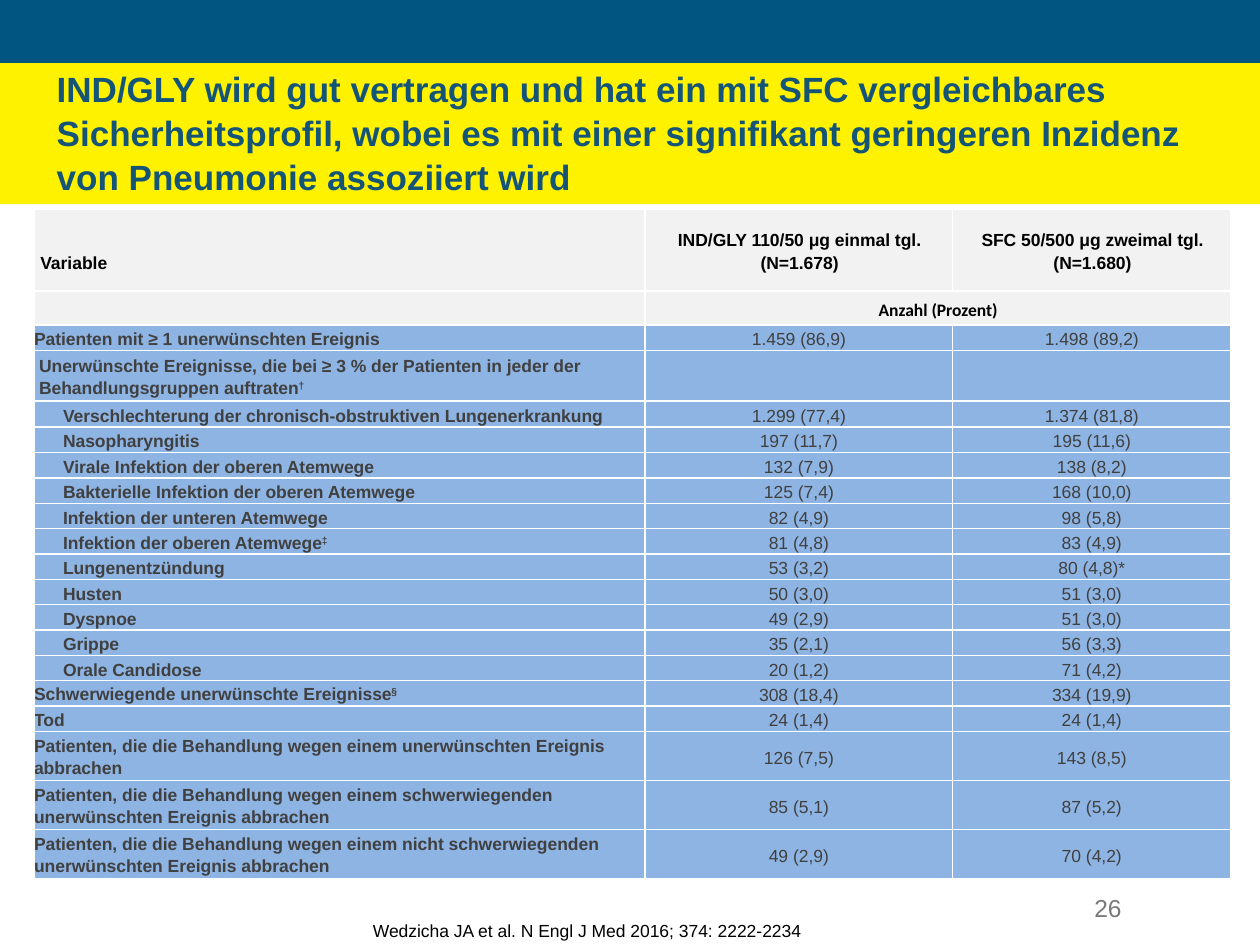
from dataclasses import dataclass

from lxml.etree import SubElement
from pptx import Presentation
from pptx.dml.color import RGBColor as RGB
from pptx.enum.shapes import MSO_SHAPE as Shape
from pptx.enum.text import MSO_ANCHOR as Anchor, MSO_AUTO_SIZE as AutoSize, PP_ALIGN as Align
from pptx.oxml.ns import qn
from pptx.util import Inches, Pt


@dataclass(frozen=True)
class Theme:
    font: str = "Arial"
    unit_font: str = "Calibri"
    title_size: int = 20
    number_size: int = 14
    body_size: int = 10
    navy: str = "005581"
    yellow: str = "FFF200"
    title: str = "145477"
    black: str = "000000"
    body: str = "404040"
    number: str = "797979"
    header_fill: str = "F2F2F2"
    body_fill: str = "8EB4E3"
    border: str = "FFFFFF"


THEME = Theme()

TITLE = ("IND/GLY wird gut vertragen und hat ein mit SFC vergleichbares Sicherheitsprofil, "
         "wobei es mit einer signifikant geringeren Inzidenz von Pneumonie assoziiert wird")
CITATION = "Wedzicha JA et al. N Engl J Med 2016; 374: 2222-2234"
# "\v" breaks a line, "\n" starts a paragraph
HEADERS = ("Variable",
           "IND/GLY 110/50 μg einmal tgl.\v(N=1.678)",
           "SFC 50/500 μg zweimal tgl.\n(N=1.680)")

# Left cell margin of each level of event
MAIN, GROUP, EVENT = 0, 0.04, 0.23

# Level, label, footnote mark, IND/GLY, SFC
EVENTS = (
    (MAIN, "Patienten mit ≥ 1 unerwünschten Ereignis", "", "1.459 (86,9)", "1.498 (89,2)"),
    (GROUP, "Unerwünschte Ereignisse, die bei ≥ 3 % der Patienten in jeder der "
            "Behandlungsgruppen auftraten", "†", "", ""),
    (EVENT, "Verschlechterung der chronisch-obstruktiven Lungenerkrankung", "",
     "1.299 (77,4)", "1.374 (81,8)"),
    (EVENT, "Nasopharyngitis", "", "197 (11,7)", "195 (11,6)"),
    (EVENT, "Virale Infektion der oberen Atemwege", "", "132 (7,9)", "138 (8,2)"),
    (EVENT, "Bakterielle Infektion der oberen Atemwege", "", "125 (7,4)", "168 (10,0)"),
    (EVENT, "Infektion der unteren Atemwege", "", "82 (4,9)", "98 (5,8)"),
    (EVENT, "Infektion der oberen Atemwege", "‡", "81 (4,8)", "83 (4,9)"),
    (EVENT, "Lungenentzündung", "", "53 (3,2)", "80 (4,8)*"),
    (EVENT, "Husten", "", "50 (3,0)", "51 (3,0)"),
    (EVENT, "Dyspnoe", "", "49 (2,9)", "51 (3,0)"),
    (EVENT, "Grippe", "", "35 (2,1)", "56 (3,3)"),
    (EVENT, "Orale Candidose", "", "20 (1,2)", "71 (4,2)"),
    (MAIN, "Schwerwiegende unerwünschte Ereignisse", "§", "308 (18,4)", "334 (19,9)"),
    (MAIN, "Tod", "", "24 (1,4)", "24 (1,4)"),
    (MAIN, "Patienten, die die Behandlung wegen einem unerwünschten Ereignis abbrachen", "",
     "126 (7,5)", "143 (8,5)"),
    (MAIN, "Patienten, die die Behandlung wegen einem schwerwiegenden unerwünschten "
           "Ereignis abbrachen", "", "85 (5,1)", "87 (5,2)"),
    (MAIN, "Patienten, die die Behandlung wegen einem nicht schwerwiegenden unerwünschten "
           "Ereignis abbrachen", "", "49 (2,9)", "70 (4,2)"),
)

# Table grid: the rows not listed share what is left of the height
COLUMNS = (4.85, 2.44, 2.21)
TABLE_HEIGHT = 5.32
SPECIAL_ROWS = {0: 0.65, 1: 0.27, 3: 0.4, 4: 0.21, 17: 0.39, 18: 0.39, 19: 0.39}


def style(paragraph, size, color, bold=False, font=THEME.font, align=Align.LEFT):
    paragraph.alignment = align
    paragraph.font.name = font
    paragraph.font.size = Pt(size)
    paragraph.font.bold = bold
    paragraph.font.color.rgb = RGB.from_string(color)


def add_band(slide, width, top, height, color):
    """Full-width colour band behind everything else."""
    band = slide.shapes.add_shape(Shape.RECTANGLE, 0, Inches(top), width, Inches(height))
    band.shadow.inherit = False
    band.fill.solid()
    band.fill.fore_color.rgb = RGB.from_string(color)
    band.line.fill.background()
    slide.shapes._spTree.insert(2, band._element)


def set_margins(frame, margin):
    frame.margin_left = frame.margin_right = Inches(margin)
    frame.margin_top = frame.margin_bottom = Inches(margin / 2)


def add_title(slide):
    title = slide.shapes.title
    title.left, title.top, title.width, title.height = map(Inches, (0.45, 0.58, 9, 0.93))
    frame = title.text_frame
    frame.text = TITLE
    frame.word_wrap = True
    frame.auto_size = AutoSize.NONE
    frame.vertical_anchor = Anchor.MIDDLE
    set_margins(frame, 0)
    frame.paragraphs[0].line_spacing = 1.05
    style(frame.paragraphs[0], THEME.title_size, THEME.title, bold=True)


def add_note(slide, box, text, size, color, align=Align.LEFT, margin=0):
    frame = slide.shapes.add_textbox(*map(Inches, box)).text_frame
    frame.word_wrap = True
    set_margins(frame, margin)
    frame.text = text
    style(frame.paragraphs[0], size, color, align=align)


def set_borders(cell):
    properties = cell._tc.get_or_add_tcPr()
    for side in ("a:lnL", "a:lnR", "a:lnT", "a:lnB"):
        line = SubElement(properties, qn(side), w=str(Pt(1)))
        SubElement(SubElement(line, qn("a:solidFill")), qn("a:srgbClr"), val=THEME.border)


def fill_cell(cell, text, fill, color, mark="", left=0.04, top=0.01, **look):
    set_borders(cell)
    cell.fill.solid()
    cell.fill.fore_color.rgb = RGB.from_string(fill)
    cell.vertical_anchor = Anchor.MIDDLE
    cell.margin_left, cell.margin_right = Inches(left), Inches(min(left, 0.04))
    cell.margin_top, cell.margin_bottom = Inches(top), 0
    cell.text = text
    for paragraph in cell.text_frame.paragraphs:
        paragraph.line_spacing = 1.15
        style(paragraph, THEME.body_size, color, **look)
        if not text:  # keeps an empty cell from stretching its row
            SubElement(paragraph._p, qn("a:endParaRPr"), sz=str(THEME.body_size * 100))
    if mark:
        footnote = cell.text_frame.paragraphs[0].add_run()
        footnote.text = mark
        footnote.font._element.set("baseline", "30000")


def add_event_table(slide):
    count = len(EVENTS) + 2
    table = slide.shapes.add_table(count, len(COLUMNS), Inches(0.27), Inches(1.66),
                                   Inches(sum(COLUMNS)), Inches(TABLE_HEIGHT)).table
    table.first_row = table.horz_banding = False
    for column, width in zip(table.columns, COLUMNS):
        column.width = Inches(width)
    plain = (TABLE_HEIGHT - sum(SPECIAL_ROWS.values())) / (count - len(SPECIAL_ROWS))
    for index, row in enumerate(table.rows):
        row.height = Inches(SPECIAL_ROWS.get(index, plain))

    # Header rows; the first heading sits half a line lower
    header = dict(fill=THEME.header_fill, color=THEME.black, bold=True)
    for column, text in enumerate(HEADERS):
        fill_cell(table.cell(0, column), text, left=0.05, top=0.01 if column else 0.19,
                  align=Align.CENTER if column else Align.LEFT, **header)
    table.cell(1, 1).merge(table.cell(1, 2))
    for column, text in enumerate(("", "Anzahl (Prozent)", "")):
        fill_cell(table.cell(1, column), text, font=THEME.unit_font, align=Align.CENTER, **header)

    # Event rows
    body = dict(fill=THEME.body_fill, color=THEME.body)
    for row, (level, label, mark, *values) in enumerate(EVENTS, start=2):
        fill_cell(table.cell(row, 0), label, mark=mark, left=level,
                  top=0.01 if level else 0, bold=True, **body)
        for column, value in enumerate(values, start=1):
            fill_cell(table.cell(row, column), value, align=Align.CENTER, **body)


def main():
    deck = Presentation()
    deck.slide_width, deck.slide_height = Inches(10), Inches(7.5)
    slide = deck.slides.add_slide(deck.slide_layouts[5])

    # Heading
    add_band(slide, deck.slide_width, 0.5, 1.12, THEME.yellow)
    add_band(slide, deck.slide_width, 0, 0.5, THEME.navy)
    add_title(slide)

    # Content and footer
    add_event_table(slide)
    add_note(slide, (6.67, 7.04, 2.33, 0.4), "26", THEME.number_size, THEME.number,
             Align.RIGHT, margin=0.1)
    add_note(slide, (2.96, 7.3, 6.16, 0.17), CITATION, THEME.body_size, THEME.black)

    deck.save("out.pptx")


if __name__ == "__main__":
    main()
